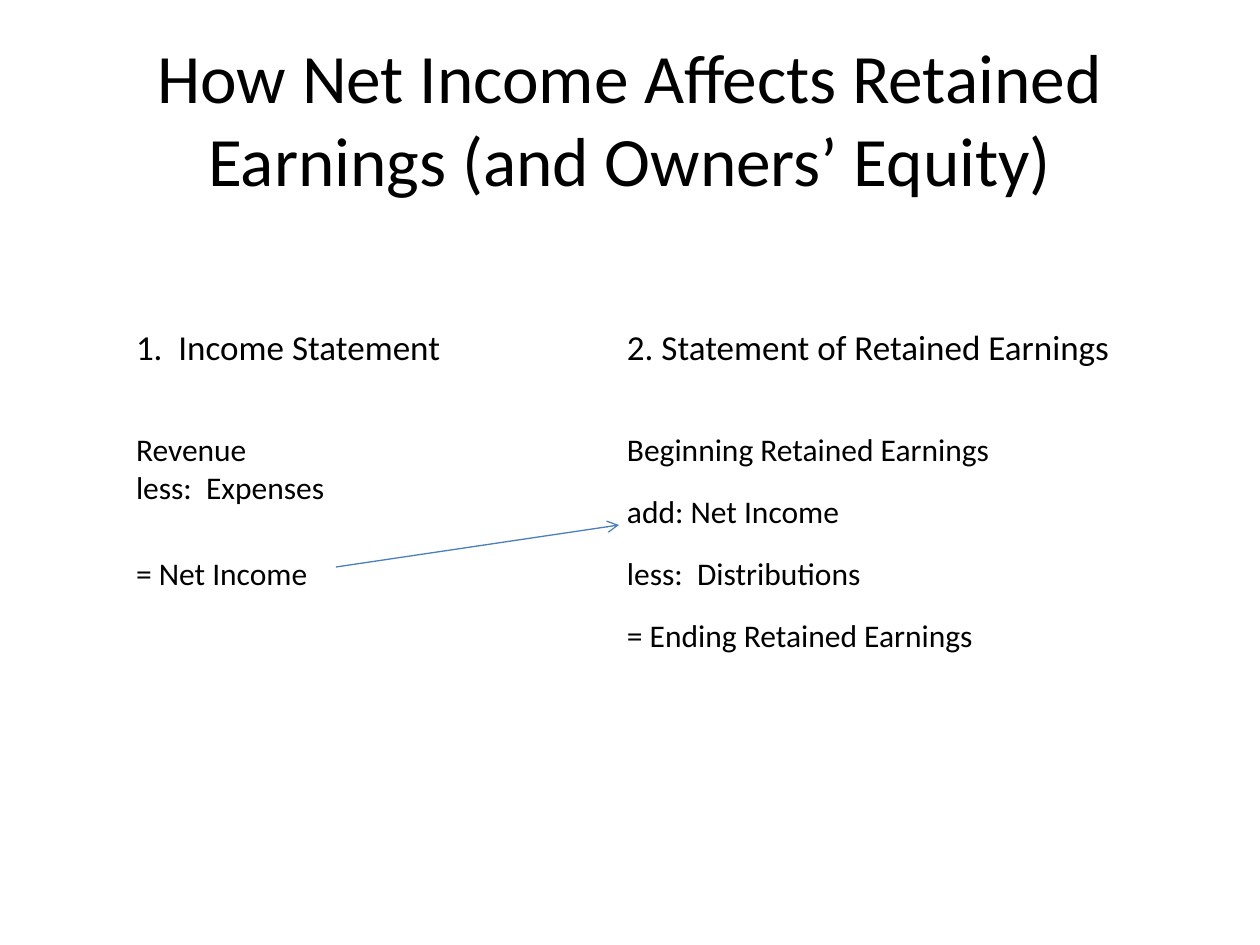
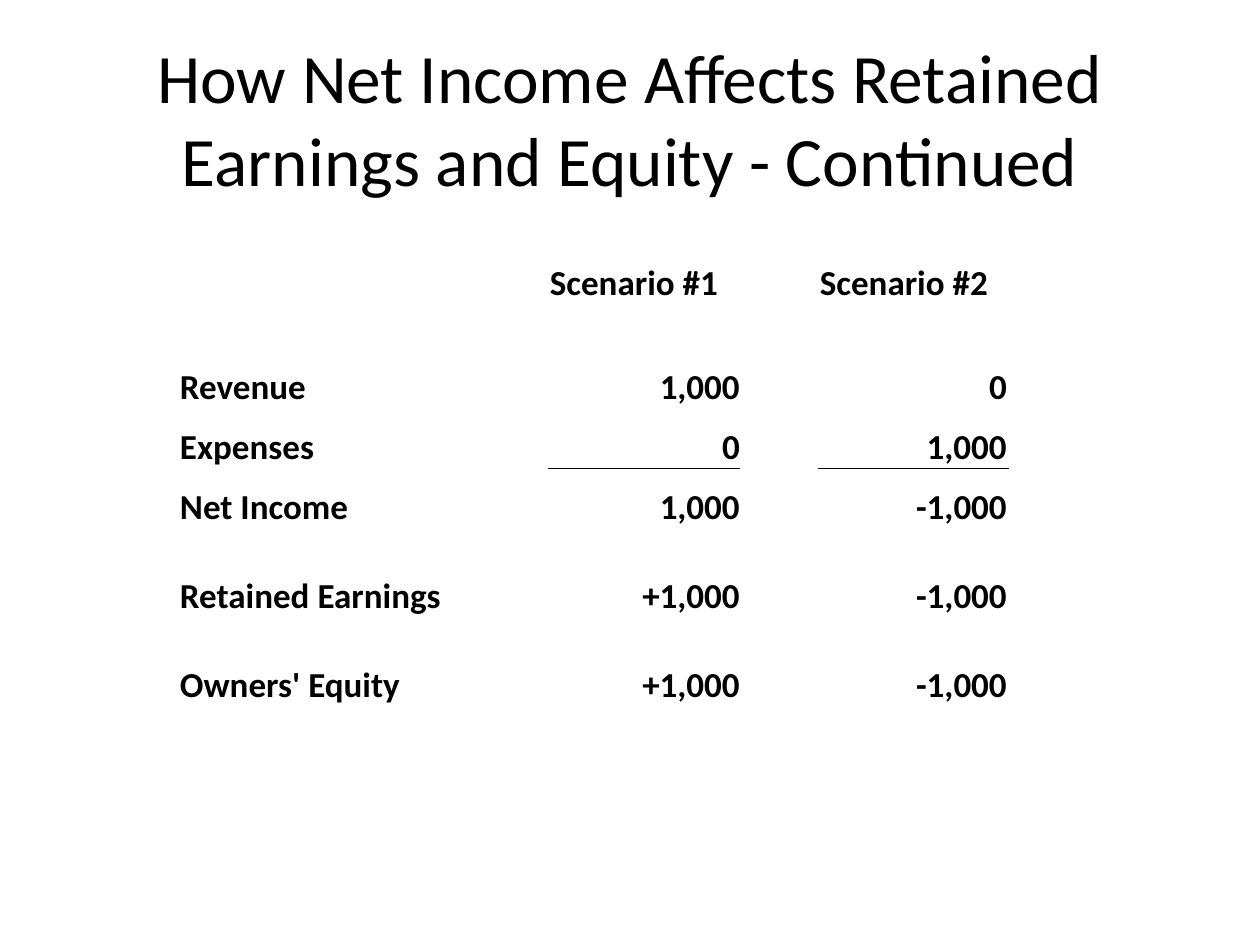
import lxml.etree
import pptx
import pptx.dml.color
import pptx.enum.shapes
import pptx.enum.text
import pptx.oxml.ns
import pptx.util

PIXELS_PER_INCH = 126
FONT = "Calibri"
INK = "000000"
ARROW_BLUE = "4B7EBC"
TITLE_SIZE = 39.6
HEADING_SIZE = 20
BODY_SIZE = 18
ALIGN = pptx.enum.text.PP_ALIGN
ANCHOR = pptx.enum.text.MSO_ANCHOR


def px(length):
    """Turn a length in pixels into EMU."""
    return pptx.util.Emu(round(length * 914400 / PIXELS_PER_INCH))


def color(value):
    """Turn a hex string into a colour."""
    return pptx.dml.color.RGBColor.from_string(value)


def add_element(parent, tag, **attributes):
    """Append a DrawingML element to a parent element."""
    return lxml.etree.SubElement(parent, pptx.oxml.ns.qn(tag), attributes)


def write_text(para, text, size, bold=False, align=ALIGN.LEFT):
    """Write one run into a paragraph."""
    para.alignment = align
    span = para.add_run()
    span.text = text
    span.font.name = FONT
    span.font.size = pptx.util.Pt(size)
    span.font.bold = bold
    span.font.color.rgb = color(INK)


def add_titled_page(deck, title):
    """Add a blank page with the centred title that all pages share."""
    page = deck.slides.add_slide(deck.slide_layouts[6])
    box = page.shapes.add_textbox(px(63), px(38), px(1134), px(158))
    frame = box.text_frame
    frame.word_wrap = True
    frame.vertical_anchor = ANCHOR.MIDDLE
    write_text(frame.paragraphs[0], title, TITLE_SIZE, align=ALIGN.CENTER)
    return page


def add_plain_table(page, left, top, widths, heights, inset=0):
    """Add a table without fills or banding, its cells anchored at the bottom."""
    frame = page.shapes.add_table(len(heights), len(widths), px(left), px(top),
                                  px(sum(widths)), px(sum(heights)))
    table = frame.table
    table.first_row = table.horz_banding = False
    for column, width in zip(table.columns, widths):
        column.width = px(width)
    for row, height in zip(table.rows, heights):
        row.height = px(height)
    for cell in table.iter_cells():
        cell.fill.background()
        cell.vertical_anchor = ANCHOR.BOTTOM
        cell.margin_left = cell.margin_right = cell.margin_top = px(inset)
        cell.margin_bottom = 0
    return table


def shrink_empty_cells(table):
    """Keep empty cells from stretching their rows."""
    for cell in table.iter_cells():
        if not cell.text_frame.text:
            add_element(cell.text_frame.paragraphs[0]._p, "a:endParaRPr", sz="800")


def add_border(cell, side):
    """Draw a thin rule on one side of a cell."""
    properties = cell._tc.get_or_add_tcPr()
    line = add_element(properties, side, w=str(pptx.util.Pt(0.5)))
    add_element(add_element(line, "a:solidFill"), "a:srgbClr", val=INK)
    properties.insert(0, line)


def add_arrow(page, start, end):
    """Draw a thin straight arrow between two points."""
    straight = pptx.enum.shapes.MSO_CONNECTOR.STRAIGHT
    arrow = page.shapes.add_connector(straight, *map(px, start + end))
    arrow.line.color.rgb = color(ARROW_BLUE)
    arrow.line.width = pptx.util.Pt(0.75)
    add_element(arrow.line._get_or_add_ln(), "a:tailEnd", type="arrow")
    add_element(arrow._element.spPr, "a:effectLst")


def build_statements_page(deck):
    """Show how net income flows between the two statements."""
    page = add_titled_page(
        deck, "How Net Income Affects Retained Earnings (and Owners’ Equity)")
    table = add_plain_table(page, 136, 305, [325, 166, 496], [65, 38] + [62] * 4)
    statements = {
        0: ["1.  Income Statement", "", "Revenue", "less:  Expenses", "= Net Income"],
        2: ["2. Statement of Retained Earnings", "", "Beginning Retained Earnings",
            "add: Net Income", "less:  Distributions", "= Ending Retained Earnings"],
    }
    for column, lines in statements.items():
        for row, text in enumerate(lines):
            if text:
                size = BODY_SIZE if row else HEADING_SIZE
                write_text(table.cell(row, column).text_frame.paragraphs[0], text, size)
    table.cell(3, 0).vertical_anchor = ANCHOR.TOP
    shrink_empty_cells(table)
    add_arrow(page, (336, 567), (619, 525))


def build_scenarios_page(deck):
    """Compare two scenarios in figures."""
    page = add_titled_page(
        deck, "How Net Income Affects Retained Earnings and Equity - Continued")
    table = add_plain_table(page, 179, 252, [277, 93, 192, 78, 189],
                            [53, 44, 60, 60, 60, 89, 89], inset=1)
    table.cell(0, 2).merge(table.cell(0, 3))
    scenario_columns = (2, 4)
    rows = {
        0: ("", "Scenario #1", "Scenario #2"),
        2: ("Revenue", "1,000", "0"),
        3: ("Expenses", "0", "1,000"),
        4: ("Net Income", "1,000", "-1,000"),
        5: ("Retained Earnings", "+1,000", "-1,000"),
        6: ("Owners' Equity", "+1,000", "-1,000"),
    }
    for row, texts in rows.items():
        for column, text in zip((0, *scenario_columns), texts):
            if text:
                align = ALIGN.RIGHT if row and column else ALIGN.LEFT
                para = table.cell(row, column).text_frame.paragraphs[0]
                write_text(para, text, HEADING_SIZE, bold=True, align=align)
    for column in scenario_columns:
        add_border(table.cell(3, column), "a:lnB")
        add_border(table.cell(4, column), "a:lnT")
    shrink_empty_cells(table)


def main():
    """Build and save the deck."""
    deck = pptx.Presentation()
    deck.slide_width, deck.slide_height = px(1260), px(945)
    build_statements_page(deck)
    build_scenarios_page(deck)
    deck.save("out.pptx")


if __name__ == "__main__":
    main()
